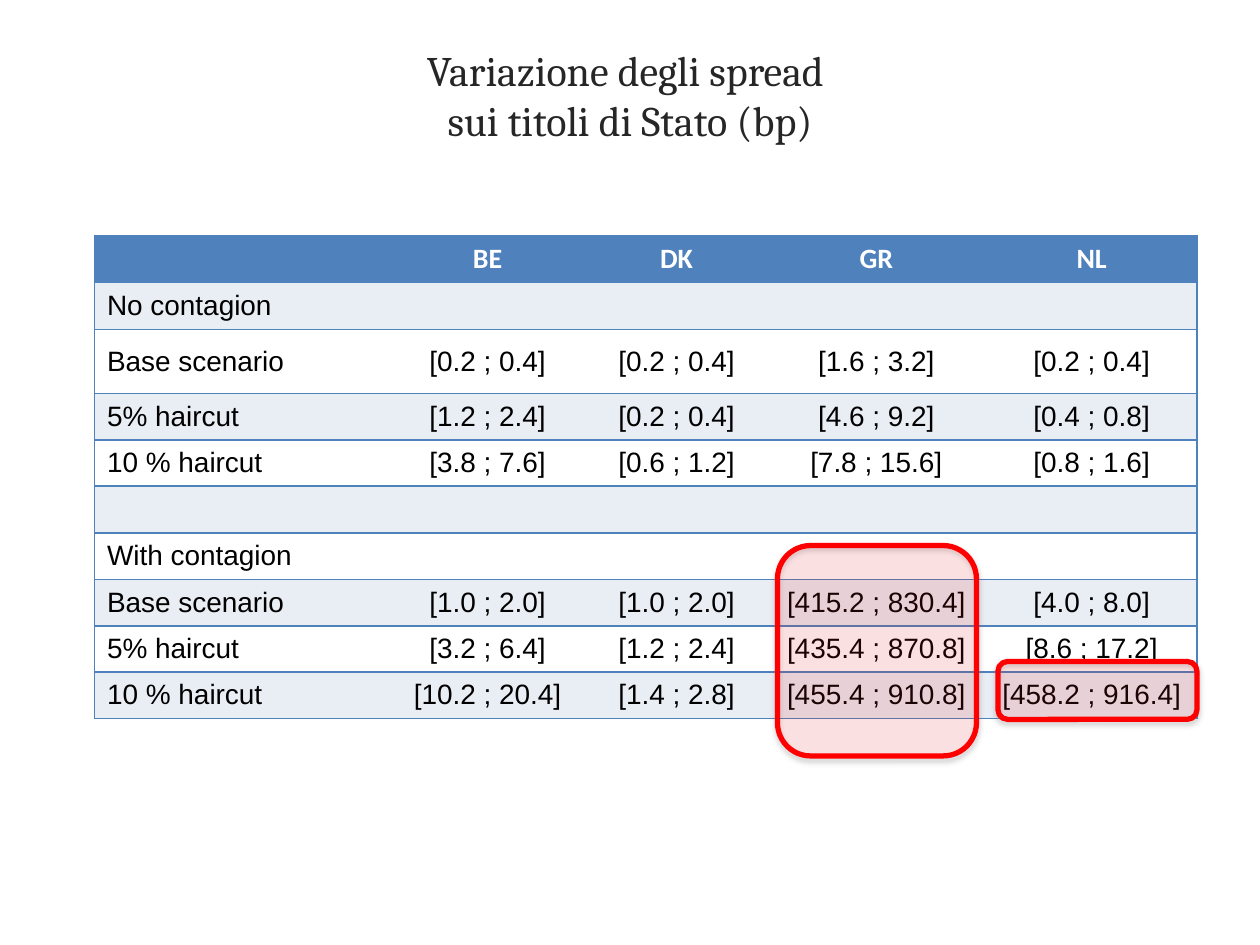
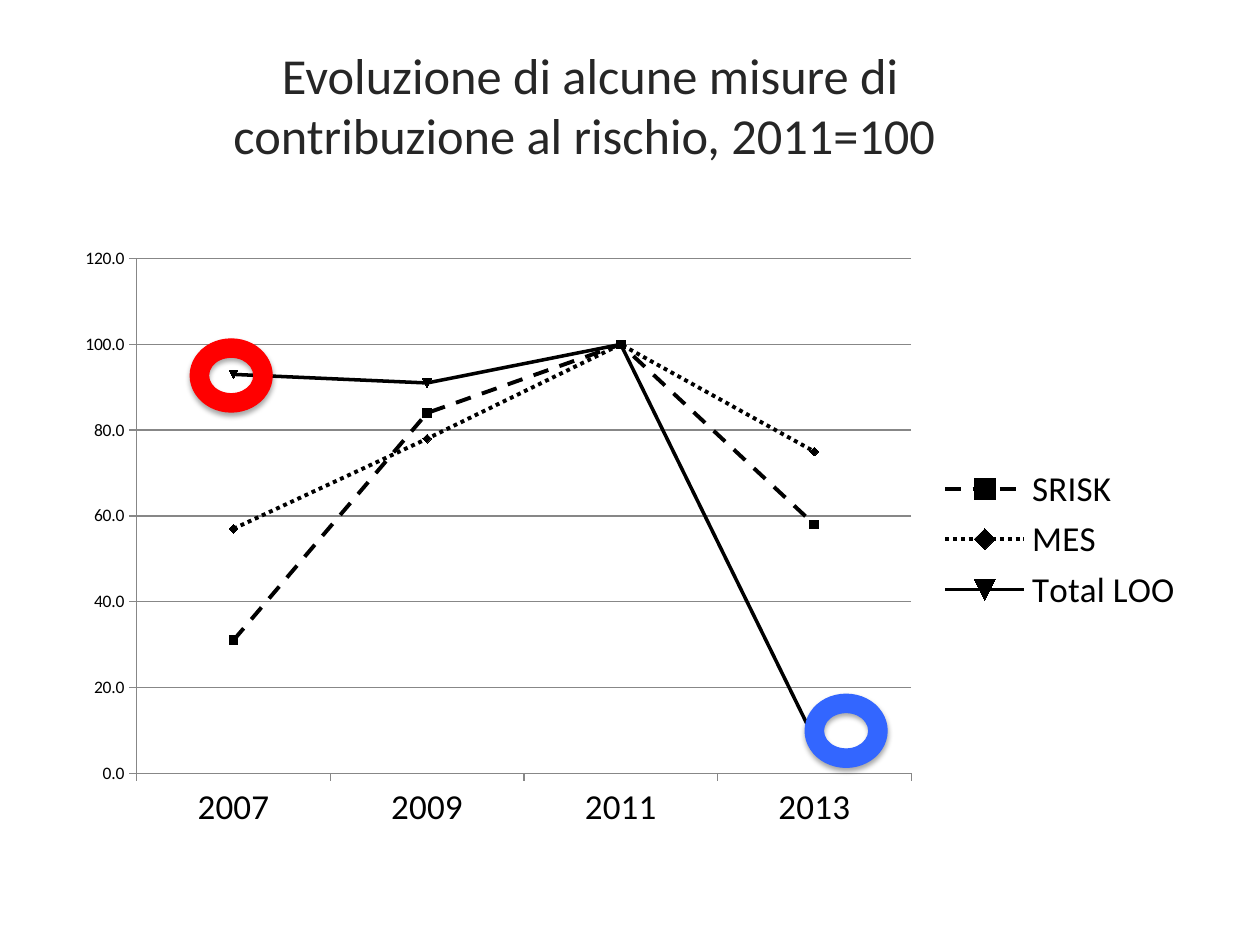
"""Build two slides on sovereign spreads and measures of risk contribution."""
from dataclasses import dataclass
from typing import Any

from lxml import etree
from pptx import Presentation
from pptx.chart.data import CategoryChartData
from pptx.dml.color import RGBColor
from pptx.enum.chart import XL_CHART_TYPE, XL_LEGEND_POSITION, XL_TICK_MARK
from pptx.enum.dml import MSO_LINE
from pptx.enum.shapes import MSO_SHAPE
from pptx.enum.text import MSO_ANCHOR, MSO_AUTO_SIZE, PP_ALIGN
from pptx.oxml import parse_xml
from pptx.oxml.ns import nsdecls, qn
from pptx.util import Inches, Pt

LINE_CHART = XL_CHART_TYPE.LINE_MARKERS
RIGHT = XL_LEGEND_POSITION.RIGHT
OUT = XL_TICK_MARK.OUTSIDE
NO_TICK = XL_TICK_MARK.NONE
DASH, DOT, SOLID = MSO_LINE.DASH, MSO_LINE.ROUND_DOT, MSO_LINE.SOLID
ROUND, DONUT = MSO_SHAPE.ROUNDED_RECTANGLE, MSO_SHAPE.DONUT
TOP, MIDDLE = MSO_ANCHOR.TOP, MSO_ANCHOR.MIDDLE
NO_FIT = MSO_AUTO_SIZE.NONE
LEFT, CENTER = PP_ALIGN.LEFT, PP_ALIGN.CENTER
PLAIN_STYLE = "{2D5ABB26-0587-4C30-8999-92F81FD0307C}"


@dataclass(frozen=True)
class Theme:
    ink: str = "000000"
    title: str = "262626"
    head: str = "4F81BD"
    band: str = "E9EDF4"
    white: str = "FFFFFF"
    grid: str = "878787"
    red: str = "FF0000"
    blue: str = "3366FF"
    gray: str = "808080"
    sans: str = "Calibri"
    serif: str = "Cambria"
    body: str = "Arial"
    cell: float = 16
    tick: float = 10
    label: float = 20


@dataclass(frozen=True)
class Box:
    x: float
    y: float
    w: float
    h: float

    def place(self) -> tuple:
        return tuple(Inches(v) for v in (self.x, self.y, self.w, self.h))


@dataclass(frozen=True)
class Mark:
    kind: Any
    box: Box
    color: str
    shade: str
    width: float
    adj: float
    alpha: int = 100


@dataclass(frozen=True)
class Trend:
    name: str
    values: tuple
    dash: Any
    width: float


THEME = Theme()
COLS = (2.33, 1.58, 1.42, 1.75, 1.67)
TALL_ROW, TALL = 2, 0.51
GRID = Box(0.75, 1.87, 8.75, 3.81)
ROWS = (
    ("", "BE", "DK", "GR", "NL"),
    ("No contagion", "", "", "", ""),
    ("Base scenario", "[0.2 ; 0.4]", "[0.2 ; 0.4]", "[1.6 ; 3.2]", "[0.2 ; 0.4]"),
    ("5% haircut", "[1.2 ; 2.4]", "[0.2 ; 0.4]", "[4.6 ; 9.2]", "[0.4 ; 0.8]"),
    ("10 % haircut", "[3.8 ; 7.6]", "[0.6 ; 1.2]", "[7.8 ; 15.6]", "[0.8 ; 1.6]"),
    ("", "", "", "", ""),
    ("With contagion", "", "", "", ""),
    ("Base scenario", "[1.0 ; 2.0]", "[1.0 ; 2.0]", "[415.2 ; 830.4]", "[4.0 ; 8.0]"),
    ("5% haircut", "[3.2 ; 6.4]", "[1.2 ; 2.4]", "[435.4 ; 870.8]", "[8.6 ; 17.2]"),
    ("10 % haircut", "[10.2 ; 20.4]", "[1.4 ; 2.8]", "[455.4 ; 910.8]", "[458.2 ; 916.4]"),
)
FRAMES = tuple(
    Mark(ROUND, box, THEME.red, THEME.gray, 3, 0.167, 10)
    for box in (Box(6.17, 4.33, 1.58, 1.67), Box(7.92, 5.25, 1.58, 0.46))
)
RINGS = tuple(
    Mark(DONUT, Box(x, y, 0.65, 0.58), color, THEME.ink, 0.75, 0.25)
    for x, y, color in ((1.51, 2.69, THEME.red), (6.39, 5.51, THEME.blue))
)
YEARS = ("2007", "2009", "2011", "2013")
TRENDS = (
    Trend("SRISK", (31, 84, 100, 58), DASH, 2.25),
    Trend("MES", (57, 78, 100, 75), DOT, 2.25),
    Trend("Total LOO", (93, 91, 100, 8), SOLID, 2),
)
PLOT = {"x": 0.065, "y": 0.036, "w": 0.683, "h": 0.851}


def apply(item: Any, **values: Any) -> None:
    for name, value in values.items():
        setattr(item, name, value)


def style(font: Any, size: float, face: str, color: str, bold: bool = False) -> None:
    apply(font, size=Pt(size), name=face, bold=bold)
    font.color.rgb = RGBColor.from_string(color)


def paint(fill: Any, color: str) -> None:
    fill.solid()
    fill.fore_color.rgb = RGBColor.from_string(color)


def stroke(line: Any, color: str, width: float) -> None:
    paint(line.fill, color)
    line.width = Pt(width)


def add_page(deck: Any, text: str, box: Box, size: float, face: str) -> Any:
    page = deck.slides.add_slide(deck.slide_layouts[5])
    title = page.shapes.title
    apply(title, **dict(zip(("left", "top", "width", "height"), box.place())))
    frame = title.text_frame
    frame.text = text
    apply(frame, word_wrap=True, auto_size=NO_FIT, vertical_anchor=TOP)
    para = frame.paragraphs[0]
    para.alignment = CENTER
    for run in para.runs:
        style(run.font, size, face, THEME.title)
    return page


def add_mark(page: Any, mark: Mark) -> None:
    shape = page.shapes.add_shape(mark.kind, *mark.box.place())
    shape.adjustments[0] = mark.adj
    paint(shape.fill, mark.color)
    stroke(shape.line, mark.color, mark.width)
    shape.shadow.inherit = False
    props = shape._element.spPr
    if mark.alpha < 100:
        tint = props.find(qn("a:solidFill")).find(qn("a:srgbClr"))
        etree.SubElement(tint, qn("a:alpha"), val=str(mark.alpha * 1000))
    shade = etree.SubElement(
        props.find(qn("a:effectLst")), qn("a:outerShdw"), blurRad=str(Pt(3.1)),
        dist=str(Pt(1.8)), dir="5400000", rotWithShape="0")
    tone = etree.SubElement(shade, qn("a:srgbClr"), val=mark.shade)
    etree.SubElement(tone, qn("a:alpha"), val="35000")


def edge(cell: Any, sides: str) -> None:
    props = cell._tc.get_or_add_tcPr()
    for side in sides:
        props.append(parse_xml(
            f'<a:ln{side} {nsdecls("a")} w="{Pt(1)}"><a:solidFill>'
            f'<a:srgbClr val="{THEME.head}"/></a:solidFill></a:ln{side}>'))


def fill_cell(cell: Any, text: str, row: int, col: int) -> None:
    sides = ("L" if col == 0 else "") + ("R" if col == len(COLS) - 1 else "")
    edge(cell, sides + "TB")
    bands = (THEME.white, THEME.band)
    paint(cell.fill, bands[row % 2] if row else THEME.head)
    cell.vertical_anchor = MIDDLE if row else TOP
    para = cell.text_frame.paragraphs[0]
    para.alignment = CENTER if col else LEFT
    if not text:
        para._p.get_or_add_endParaRPr().set("sz", str(int(THEME.cell * 100)))
        return
    run = para.add_run()
    run.text = text
    look = (THEME.body, THEME.ink) if row else (THEME.sans, THEME.white, True)
    style(run.font, THEME.cell, *look)


def add_grid(page: Any) -> None:
    frame = page.shapes.add_table(len(ROWS), len(COLS), *GRID.place())
    table = frame.table
    for node in frame._element.iter(qn("a:tableStyleId")):
        node.text = PLAIN_STYLE
    for col, width in zip(table.columns, COLS):
        col.width = Inches(width)
    short = (GRID.h - TALL) / (len(ROWS) - 1)
    for r, texts in enumerate(ROWS):
        table.rows[r].height = Inches(TALL if r == TALL_ROW else short)
        for c, text in enumerate(texts):
            fill_cell(table.cell(r, c), text, r, c)


def set_plot(chart: Any) -> None:
    area = chart._chartSpace.chart.plotArea
    for old in area.findall(qn("c:layout")):
        area.remove(old)
    parts = {"layoutTarget": "inner", "xMode": "edge", "yMode": "edge", **PLOT}
    items = "".join(f'<c:{tag} val="{val}"/>' for tag, val in parts.items())
    area.insert(0, parse_xml(
        f'<c:layout {nsdecls("c")}><c:manualLayout>{items}</c:manualLayout></c:layout>'))


def add_lines(page: Any) -> None:
    data = CategoryChartData(number_format="0.0")
    data.categories = YEARS
    for trend in TRENDS:
        data.add_series(trend.name, trend.values)
    box = Box(0.5, 1.88, 9, 4.8)
    chart = page.shapes.add_chart(LINE_CHART, *box.place(), data).chart
    apply(chart, has_title=False, has_legend=True)
    style(chart.font, THEME.tick, THEME.sans, THEME.ink)
    apply(chart.legend, position=RIGHT, include_in_layout=False)
    style(chart.legend.font, THEME.label, THEME.sans, THEME.ink)
    plot = chart.plots[0]
    plot.vary_by_categories = False
    for line, trend in zip(plot.series, TRENDS):
        line.smooth = False
        stroke(line.format.line, THEME.ink, trend.width)
        line.format.line.dash_style = trend.dash
        line.marker.size = 5
        paint(line.marker.format.fill, THEME.ink)
        stroke(line.marker.format.line, THEME.ink, 0.75)
    years, scale = chart.category_axis, chart.value_axis
    for axis, size in ((years, THEME.label), (scale, THEME.tick)):
        apply(axis, major_tick_mark=OUT, minor_tick_mark=NO_TICK)
        stroke(axis.format.line, THEME.grid, 0.75)
        style(axis.tick_labels.font, size, THEME.sans, THEME.ink)
    apply(scale, minimum_scale=0, maximum_scale=120, major_unit=20,
          has_major_gridlines=True)
    apply(scale.tick_labels, number_format="0.0", number_format_is_linked=False)
    stroke(scale.major_gridlines.format.line, THEME.grid, 0.75)
    set_plot(chart)


def main() -> None:
    deck = Presentation()
    apply(deck, slide_width=Inches(10), slide_height=Inches(7.5))
    spread = add_page(deck, "Variazione degli spread \vsui titoli di Stato (bp)",
                      Box(0.5, 0.3, 9, 1.25), 24, THEME.serif)
    add_grid(spread)
    risk = add_page(
        deck, "Evoluzione di alcune misure di contribuzione al rischio, 2011=100 ",
        Box(1.51, 0.3, 6.35, 1.25), 28.8, THEME.sans)
    add_lines(risk)
    for page, marks in ((spread, FRAMES), (risk, RINGS)):
        for mark in marks:
            add_mark(page, mark)
    deck.save("out.pptx")


if __name__ == "__main__":
    main()
